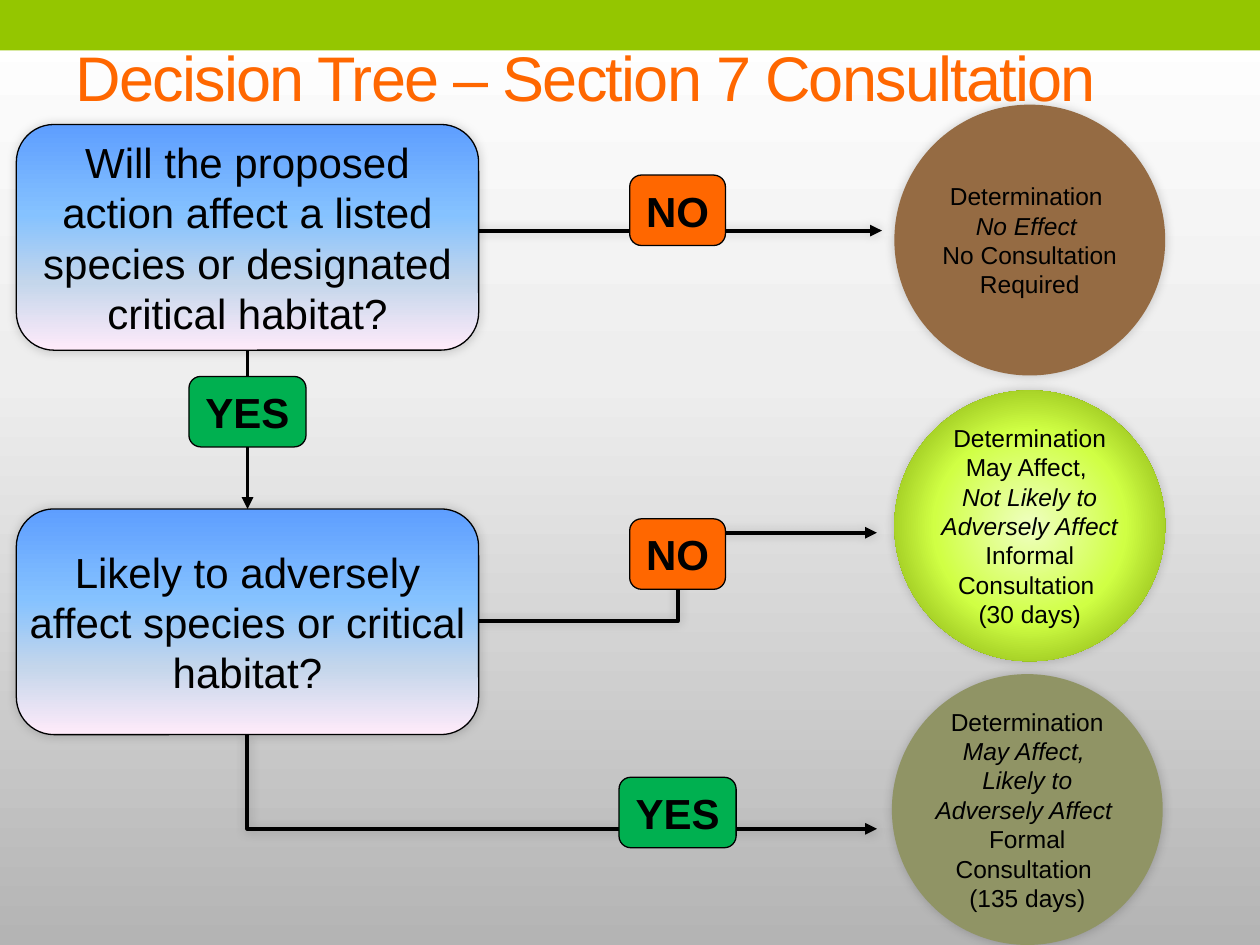
import dataclasses

import pptx
import pptx.dml.color
import pptx.enum.shapes
import pptx.enum.text
import pptx.oxml
import pptx.oxml.ns
import pptx.util
from lxml import etree

Cm = pptx.util.Cm
Pt = pptx.util.Pt
SHAPE = pptx.enum.shapes.MSO_SHAPE
CONNECTOR = pptx.enum.shapes.MSO_CONNECTOR
ALIGN = pptx.enum.text.PP_ALIGN
qn = pptx.oxml.ns.qn


@dataclasses.dataclass(frozen=True)
class Theme:
    """Colours, gradients and type sizes of the slide."""
    font: str = "Arial"
    ink: str = "000000"
    white: str = "FFFFFF"
    band: str = "94C600"
    orange: str = "FF6700"
    green: str = "00B050"
    brown: str = "956B43"
    olive: str = "909465"
    backdrop: tuple = ((0, "FFFFFF"), (40, "EEEEEE"), (100, "B4B4B4"))
    question: tuple = ((0, "5E9EFF"), (40, "85C2FF"), (70, "C4D6EB"), (100, "FFEBFA"))
    lime: tuple = ((0, "EFFFC1"), (50, "D0FF44"), (100, "6F9400"))
    title_size: int = 36
    question_size: int = 24
    outcome_size: int = 14


THEME = Theme()


def color(value):
    """Return an RGB colour from its hex text."""
    return pptx.dml.color.RGBColor.from_string(value)


def add_child(parent, tag, **attributes):
    """Append a drawing element with the given attributes."""
    return etree.SubElement(parent, qn(tag), {key: str(value) for key, value in attributes.items()})


def paint(fill, owner, paint_value, radial=False):
    """Fill with one colour, or with gradient stops running down or outward."""
    if isinstance(paint_value, str):
        fill.solid()
        fill.fore_color.rgb = color(paint_value)
        return
    fill.gradient()
    gradient = owner.find(".//" + qn("a:gradFill"))
    gradient.clear()
    stops = add_child(gradient, "a:gsLst")
    for position, value in paint_value:
        stop = add_child(stops, "a:gs", pos=position * 1000)
        add_child(stop, "a:srgbClr", val=value)
    if radial:
        circle = add_child(gradient, "a:path", path="circle")
        add_child(circle, "a:fillToRect", l=50000, t=50000, r=50000, b=50000)
    else:
        add_child(gradient, "a:lin", ang=5400000, scaled=0)


def add_shadow(effects):
    """Add a soft shadow to an effect list."""
    shadow = add_child(effects, "a:outerShdw", blurRad=Pt(6), dist=0, dir=18900000)
    add_child(add_child(shadow, "a:srgbClr", val=THEME.ink), "a:alpha", val=20000)


def add_block(page, kind, box, fill, outline=False, shadow=False, radial=False):
    """Place a preset shape in a box given in centimetres."""
    shape = page.shapes.add_shape(kind, *map(Cm, box))
    paint(shape.fill, shape._element.spPr, fill, radial)
    if outline:
        shape.line.color.rgb = color(THEME.ink)
        shape.line.width = Pt(0.75)
    else:
        shape.line.fill.background()
    shape.shadow.inherit = False
    if shadow:
        add_shadow(shape._element.spPr.find(qn("a:effectLst")))
    return shape


def write(shape, paragraphs, size, ink=THEME.ink, align=ALIGN.CENTER, bold=False, wrap=True, inset=0):
    """Write paragraphs of (text, italic) spans, centred vertically."""
    frame = shape.text_frame
    frame.word_wrap = wrap
    frame.vertical_anchor = pptx.enum.text.MSO_ANCHOR.MIDDLE
    frame.margin_left = frame.margin_right = Cm(inset)
    frame.margin_top = frame.margin_bottom = Cm(inset / 2)
    for index, spans in enumerate(paragraphs):
        para = frame.add_paragraph() if index else frame.paragraphs[0]
        para.alignment = align
        for text, italic in spans:
            span = para.add_run()
            span.text = text
            span.font.name = THEME.font
            span.font.size = Pt(size)
            span.font.bold = bold
            span.font.italic = italic
            span.font.color.rgb = color(ink)


def add_header(page, box, title):
    """Draw the top bands and the title below them."""
    left, top, width, height = box
    add_block(page, SHAPE.RECTANGLE, (left, top + 0.61, width, 0.64), THEME.white)
    add_block(page, SHAPE.RECTANGLE, (left, top, width, 1.02), THEME.band)
    heading = page.shapes.add_textbox(Cm(left + 1.27), Cm(top + 0.76), Cm(width - 2.54), Cm(height - 0.76))
    write(heading, [[(title, False)]], THEME.title_size, THEME.orange, ALIGN.LEFT, inset=0.25)
    heading.text_frame.paragraphs[0].runs[0].font._element.set("spc", "-100")


def add_arrow(page, kind, tip, tail, corner=False, shadow=True):
    """Connect a tail to an arrow tip, with a single corner on request."""
    arrow = page.shapes.add_connector(kind, *map(Cm, tip + tail))
    arrow.line.color.rgb = color(THEME.ink)
    arrow.line.width = Pt(2.25)
    properties = arrow._element.spPr
    if corner:
        properties.find(qn("a:prstGeom")).set("prst", "bentConnector2")
    add_child(properties.find(qn("a:ln")), "a:headEnd", type="triangle")
    effects = add_child(properties, "a:effectLst")
    if shadow:
        add_shadow(effects)


def add_question(page, box, text):
    """Draw a question box."""
    shape = add_block(page, SHAPE.ROUNDED_RECTANGLE, box, THEME.question, outline=True, shadow=True)
    write(shape, [[(text, False)]], THEME.question_size)


def add_answer(page, center, text):
    """Draw a YES or NO label around a centre point."""
    width, fill = {"YES": (2.36, THEME.green), "NO": (1.93, THEME.orange)}[text]
    height = 1.42
    box = (center[0] - width / 2, center[1] - height / 2, width, height)
    shape = add_block(page, SHAPE.FLOWCHART_ALTERNATE_PROCESS, box, fill, outline=True)
    write(shape, [[(text, False)]], THEME.question_size, bold=True, wrap=False, inset=0.25)


def add_outcome(page, box, fill, paragraphs):
    """Draw a determination circle."""
    shape = add_block(page, SHAPE.OVAL, box, fill, shadow=True, radial=True)
    write(shape, paragraphs, THEME.outcome_size)


def add_tree(page, box):
    """Draw the arrows, questions, answers and outcomes of the tree."""
    left, top, width, height = box
    question_width, question_height, second = 9.32, 4.55, top + 7.75
    middle, edge = left + question_width / 2, left + question_width
    tip, answer, diameter = left + 17.35, left + 13.33, 5.46

    add_arrow(page, CONNECTOR.ELBOW, (tip, second + 0.48), (edge, second + 2.26))
    add_arrow(page, CONNECTOR.ELBOW, (tip + 0.1, top + 2.14), (middle, top + 1.07), corner=True)
    add_arrow(page, CONNECTOR.ELBOW, (tip, top + 14.2), (middle, second + question_height), corner=True)
    add_arrow(page, CONNECTOR.STRAIGHT, (middle, second), (middle, top + question_height), shadow=False)

    questions = ((top, "Will the proposed action affect a listed species or designated critical habitat?"),
                 (second, "Likely to adversely affect species or critical habitat?"))
    for y, text in questions:
        add_question(page, (left, y, question_width, question_height), text)

    for x, y, text in ((middle, 5.79, "YES"), (answer, 1.73, "NO"),
                       (answer, 8.66, "NO"), (answer, 13.87, "YES")):
        add_answer(page, (x, top + y), text)

    outcomes = (
        (17.7, -0.4, THEME.brown, [
            [("Determination ", False)],
            [("No Effect ", True)],
            [("No Consultation Required", False)]]),
        (17.7, 5.36, THEME.lime, [
            [("Determination May Affect, ", False)],
            [("Not Likely to Adversely Affect ", True), ("Informal Consultation ", False)],
            [("(30 days)", False)]]),
        (17.65, 11.08, THEME.olive, [
            [("Determination ", False), ("May Affect, ", True)],
            [("Likely to Adversely Affect ", True)],
            [("Formal Consultation ", False)],
            [("(135 days)", False)]]))
    for x, y, fill, paragraphs in outcomes:
        add_outcome(page, (left + x, top + y, diameter, diameter), fill, paragraphs)


def main():
    """Build and save the deck."""
    deck = pptx.Presentation()
    deck.slide_width, deck.slide_height = Cm(25.4), Cm(19.05)
    page = deck.slides.add_slide(deck.slide_layouts[6])
    paint(page.background.fill, page._element, THEME.backdrop)
    add_header(page, (0, 0, 25.4, 2.31), "Decision Tree – Section 7 Consultation")
    add_tree(page, (0.33, 2.51, 23.16, 16.54))
    deck.save("out.pptx")


if __name__ == "__main__":
    main()
